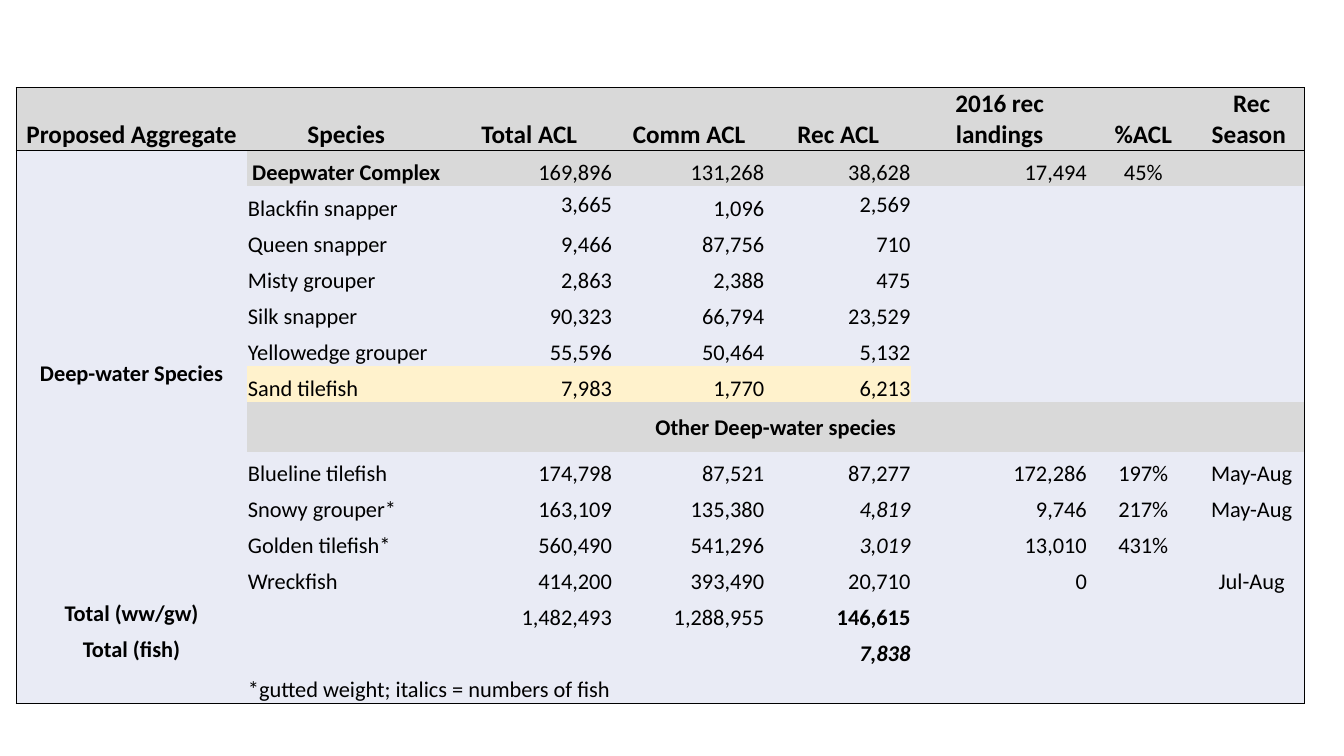
import lxml.etree
import pptx
import pptx.dml.color
import pptx.enum.text
import pptx.oxml.ns
import pptx.util

Inches = pptx.util.Inches
ALIGN = pptx.enum.text.PP_ALIGN
ANCHOR = pptx.enum.text.MSO_ANCHOR

COLUMN_WIDTHS = [2.29, 1.97, 1.66, 1.51, 1.45, 1.75, 1.1, 1.05]
COLUMN_ALIGNMENTS = [ALIGN.CENTER, ALIGN.LEFT] + [ALIGN.RIGHT] * 4 + [ALIGN.CENTER] * 2
ROW_HEIGHT = 5 / 14
SECTION_HEIGHT = 0.49

ROWS = [
    ["Proposed Aggregate", "Species", "Total ACL", "Comm ACL", "Rec ACL",
     "2016 rec landings", "%ACL", "Rec Season "],
    ["Deep-water Species", "Deepwater Complex", "169,896", "131,268", "38,628", "17,494", "45%"],
    ["", "Blackfin snapper", "3,665", "1,096", "2,569"],
    ["", "Queen snapper", "9,466", "87,756", "710"],
    ["", "Misty grouper", "2,863", "2,388", "475"],
    ["", "Silk snapper", "90,323", "66,794", "23,529"],
    ["", "Yellowedge grouper", "55,596", "50,464", "5,132"],
    ["", "Sand tilefish", "7,983", "1,770", "6,213"],
    ["", "Other Deep-water species"],
    ["", "Blueline tilefish", "174,798", "87,521", "87,277", "172,286", "197%", "May-Aug"],
    ["", "Snowy grouper*", "163,109", "135,380", "4,819", "9,746", "217%", "May-Aug"],
    ["", "Golden tilefish*", "560,490", "541,296", "3,019", "13,010", "431%"],
    ["", "Wreckfish", "414,200", "393,490", "20,710", "0", "", "Jul-Aug"],
    ["Total (ww/gw)", "", "1,482,493", "1,288,955", "146,615"],
    ["Total (fish)", "", "", "", "7,838"],
    ["", "*gutted weight; italics = numbers of fish"],
]
HEADER, COMPLEX, BLACKFIN, SAND, SECTION, FOOTNOTE = 0, 1, 2, 7, 8, 15
LAST_COLUMN = len(COLUMN_WIDTHS) - 1
MERGES = [(1, 0, 12, 0), (SECTION, 1, SECTION, LAST_COLUMN), (FOOTNOTE, 1, FOOTNOTE, 3)]
BOLD_CELLS = {(COMPLEX, 1), (SECTION, 1), (13, 4), (14, 4)}
ITALIC_CELLS = {(10, 4), (11, 4), (14, 4)}
CENTERED_CELLS = {(COMPLEX, 1), (SECTION, 1)}
MIDDLE_CELLS = {(BLACKFIN, 2), (BLACKFIN, 4), (SECTION, 1)}


def color(value):
    return pptx.dml.color.RGBColor.from_string(value)


def apply_format(target, values):
    for name, value in values.items():
        setattr(target, name, value)


class SlideBuilder:
    font_name = "Calibri"
    ink = "000000"
    gray = "D9D9D9"
    pale_blue = "E9EBF5"
    yellow = "FFF2CC"
    border_width = pptx.util.Pt(1)

    def __init__(self, presentation):
        self.slide = presentation.slides.add_slide(presentation.slide_layouts[6])

    def table(self, left, top):
        width = sum(COLUMN_WIDTHS)
        height = ROW_HEIGHT * (len(ROWS) - 1) + SECTION_HEIGHT
        frame = self.slide.shapes.add_table(
            len(ROWS), len(COLUMN_WIDTHS),
            Inches(left), Inches(top), Inches(width), Inches(height))
        table = frame.table
        for column, column_width in zip(table.columns, COLUMN_WIDTHS):
            column.width = Inches(column_width)
        for index, row in enumerate(table.rows):
            row.height = Inches(SECTION_HEIGHT if index == SECTION else ROW_HEIGHT)
        for first_row, first_column, last_row, last_column in MERGES:
            table.cell(first_row, first_column).merge(table.cell(last_row, last_column))
        for row, texts in enumerate(ROWS):
            for column in range(len(COLUMN_WIDTHS)):
                text = texts[column] if column < len(texts) else ""
                self.cell(table.cell(row, column), row, column, text)

    def cell(self, cell, row, column, text):
        position = (row, column)
        middle = position in MIDDLE_CELLS or (column == 0 and row != HEADER)
        apply_format(cell, {
            "margin_left": Inches(0.01),
            "margin_right": Inches(0.01),
            "margin_top": Inches(0.01),
            "margin_bottom": 0,
            "vertical_anchor": ANCHOR.MIDDLE if middle else ANCHOR.BOTTOM,
        })
        cell.fill.solid()
        cell.fill.fore_color.rgb = color(self.cell_fill(row, column))
        self.borders(cell, row, column)
        if text:
            self.cell_text(cell, position, text)

    def cell_fill(self, row, column):
        if row == HEADER or (row in (COMPLEX, SECTION) and column > 0):
            return self.gray
        if row == SAND and 1 <= column <= 4:
            return self.yellow
        return self.pale_blue

    def cell_text(self, cell, position, text):
        row, column = position
        paragraph = cell.text_frame.paragraphs[0]
        centered = row == HEADER or position in CENTERED_CELLS
        paragraph.alignment = ALIGN.CENTER if centered else COLUMN_ALIGNMENTS[column]
        run = paragraph.add_run()
        run.text = text
        apply_format(run.font, {
            "name": self.font_name,
            "size": pptx.util.Pt(18 if row == HEADER else 16),
            "bold": row == HEADER or column == 0 or position in BOLD_CELLS,
            "italic": position in ITALIC_CELLS,
        })
        run.font.color.rgb = color(self.ink)

    def borders(self, cell, row, column):
        sides = {
            "lnL": column == 0,
            "lnR": column == LAST_COLUMN or (row, column) == (SECTION, 1),
            "lnT": row in (HEADER, COMPLEX),
            "lnB": row in (HEADER, FOOTNOTE),
        }
        qualified = pptx.oxml.ns.qn
        properties = cell._tc.get_or_add_tcPr()
        for index, (side, visible) in enumerate(sides.items()):
            line = lxml.etree.Element(qualified("a:" + side), w=str(self.border_width))
            properties.insert(index, line)
            if visible:
                fill = lxml.etree.SubElement(line, qualified("a:solidFill"))
                lxml.etree.SubElement(fill, qualified("a:srgbClr"), val=self.ink)
            else:
                lxml.etree.SubElement(line, qualified("a:noFill"))


def main():
    presentation = pptx.Presentation()
    presentation.slide_width = Inches(13.33)
    presentation.slide_height = Inches(7.5)
    SlideBuilder(presentation).table(0.16, 0.87)
    presentation.save("out.pptx")


if __name__ == "__main__":
    main()
